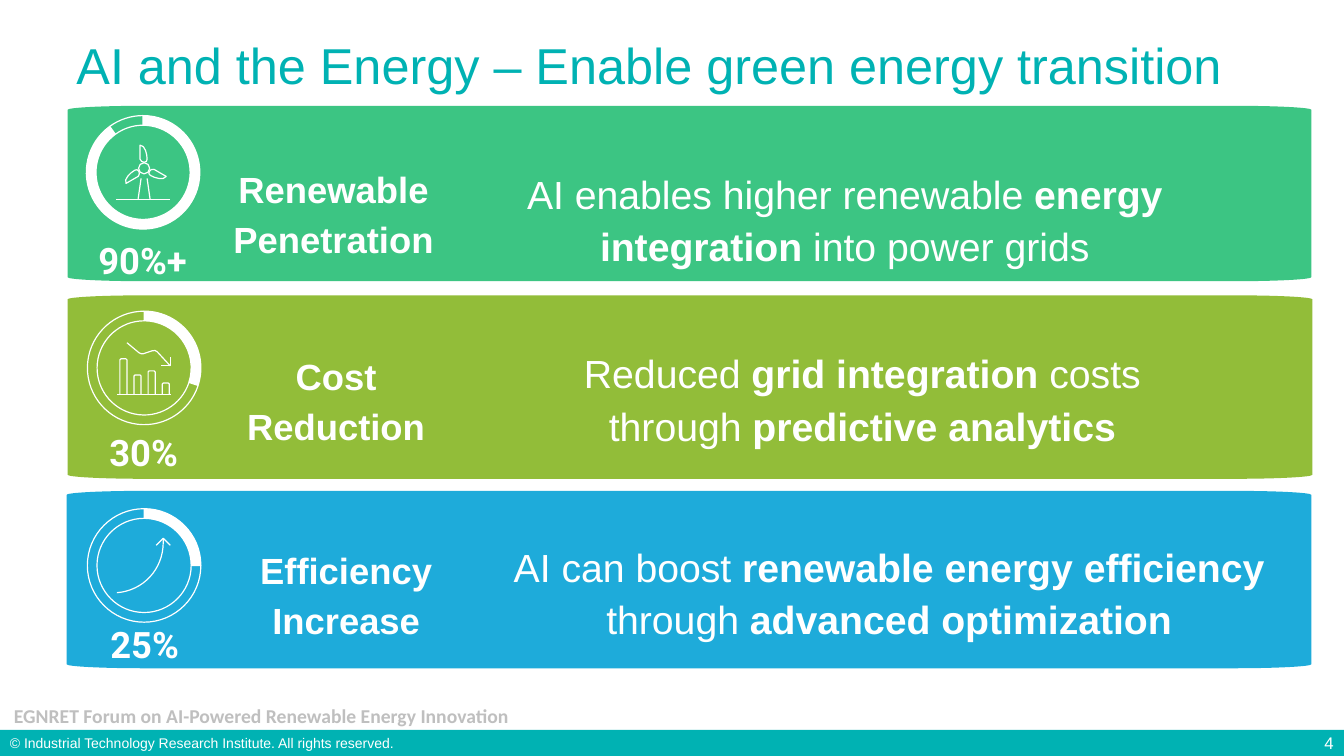
from math import cos, sin, tan, ceil, radians
from pptx import Presentation
from pptx.dml.color import RGBColor as Rgb
from pptx.enum.shapes import MSO_SHAPE as Shape
from pptx.enum.text import MSO_ANCHOR as Anchor, PP_ALIGN as Align
from pptx.oxml.ns import qn
from pptx.util import Inches, Pt

COLORS = {
    "teal": "00B2B3",
    "green": "3CC583",
    "olive": "92BD39",
    "blue": "1EABDA",
    "white": "FFFFFF",
    "grey": "BFBFBF",
}
ROWS = 75
COLS = 133.33


def line(*points):
    return [(p,) for p in points]


def arc(x, y, wide, high, start, end):
    count = ceil(abs(end - start) / 90)
    step = radians((end - start) / count)
    pull = 4 / 3 * tan(step / 4)

    def spot(t, k):
        return (x + wide * (sin(t) + k * cos(t)), y - high * (cos(t) - k * sin(t)))

    first = radians(start)
    turns = [first + step * i for i in range(count)]
    return line(spot(first, 0)) + [
        (spot(t, pull), spot(t + step, -pull), spot(t + step, 0)) for t in turns]


def turn(steps, x, y, angle):
    c, s = cos(radians(angle)), sin(radians(angle))
    return [tuple((x + a * c - b * s, y + a * s + b * c) for a, b in step)
            for step in steps]


class Deck:
    def __init__(self):
        self.show = Presentation()
        self.show.slide_width = Inches(13.333)
        self.show.slide_height = Inches(7.5)
        self.cell = self.show.slide_height / ROWS
        self.slide = self.show.slides.add_slide(self.show.slide_layouts[6])
        self.shapes = self.slide.shapes

    def size(self, *cells):
        return [round(c * self.cell) for c in cells]

    def paint(self, shape, fill, edge):
        shape.shadow.inherit = False
        if fill:
            shape.fill.solid()
            shape.fill.fore_color.rgb = Rgb.from_string(COLORS[fill])
        else:
            shape.fill.background()
        if edge:
            shape.line.color.rgb = Rgb.from_string(COLORS[edge])
            shape.line.width = Pt(0.84)
        else:
            shape.line.fill.background()

    def rect(self, x, y, w, h, fill):
        shape = self.shapes.add_shape(Shape.RECTANGLE, *self.size(x, y, w, h))
        self.paint(shape, fill, None)

    def draw(self, tracks, fill=None, edge=None):
        form = self.shapes.build_freeform(*self.size(*tracks[0][0][0]), scale=1.0)
        for i, track in enumerate(tracks):
            if i:
                form.move_to(*self.size(*track[0][0]))
            points = [self.size(*p) for step in track[1:] for p in step]
            form.add_line_segments(points, close=bool(fill))
        shape = form.convert_to_shape()
        self.bend(shape, [step for track in tracks for step in track])
        self.paint(shape, fill, edge)

    def bend(self, shape, steps):
        outline = shape._element.find(".//" + qn("a:path"))
        nodes = iter([n for n in outline if n.tag != qn("a:close")])
        for step in steps:
            group = [next(nodes) for _ in step]
            if len(group) == 3:
                bow = outline.makeelement(qn("a:cubicBezTo"))
                group[0].addprevious(bow)
                for node in group:
                    bow.append(node[0])
                    outline.remove(node)

    def band(self, x, y, w, h, fill):
        wide, high = 7.7, 0.4
        left, right = x + wide, x + w - wide
        top, low = y + high, y + h - high
        self.draw([
            arc(right, top, wide, high, 0, 90)
            + arc(right, low, wide, high, 90, 180)
            + arc(left, low, wide, high, 180, 270)
            + arc(left, top, wide, high, 270, 360)
        ], fill)

    def ring(self, x, y, share):
        big, small = 5.63, 4.67
        end = 360 * share
        self.draw([arc(x, y, r, r, end, 360) for r in (big, small)], edge="white")
        self.draw([arc(x, y, big, big, 0, end) + arc(x, y, small, small, end, 0)],
                  "white", "white")

    def text(self, x, y, w, h, lines, size, color="white", font="Arial",
             bold=False, align=Align.CENTER, gap=None, pad=False, anchor=Anchor.TOP):
        frame = self.shapes.add_textbox(*self.size(x, y, w, h)).text_frame
        frame.word_wrap = True
        frame.vertical_anchor = anchor
        frame.margin_left = frame.margin_right = Inches(0.1 if pad else 0)
        frame.margin_top = frame.margin_bottom = Inches(0.05 if pad else 0)
        for i, parts in enumerate(lines):
            para = frame.add_paragraph() if i else frame.paragraphs[0]
            para.alignment = align
            if gap:
                para.line_spacing = gap
            para.font.size = Pt(size)
            para.font.name = font
            para.font.color.rgb = Rgb.from_string(COLORS[color])
            if isinstance(parts, str):
                para.font.bold = bold
                para.add_run().text = parts
            else:
                for k, part in enumerate(parts):
                    run = para.add_run()
                    run.text = part
                    run.font.bold = k % 2 == 1


def wind():
    x, y = 14.3, 16.7
    blade = line((-0.4, -2.3), (-0.4, -0.9)) + [
        ((-0.3, -0.7), (-0.2, -0.6), (0, -0.6)),
        ((0.2, -0.6), (0.3, -0.7), (0.3, -0.9)),
        ((0.3, -1.4), (0.1, -2.3), (-0.4, -2.3)),
    ]
    return [
        line((11.5, 19.8), (16.9, 19.8)),
        arc(x, y, 0.55, 0.55, 0, 360),
        *[turn(blade, x, y, angle) for angle in (0, 120, 240)],
        line((14, 17.7), (13.7, 19.8)),
        line((14.6, 17.7), (14.9, 19.8)),
    ]


def chart():
    base, wide, r = 39.1, 0.7, 0.1
    bars = []
    for i, top in enumerate((35.6, 37.2, 36.8, 38)):
        x = 11.9 + 1.4 * i
        bars.append(
            line((x, base))
            + arc(x + r, top + r, r, r, 270, 360)
            + arc(x + wide - r, top + r, r, r, 0, 90)
            + line((x + wide, base))
        )
    trend = (
        line((12.6, 34), (13.8, 35))
        + [((13.9, 35.1), (14.1, 35.1), (14.2, 35.1))]
        + line((15.1, 34.8))
        + [((15.3, 34.7), (15.5, 34.8), (15.6, 34.9))]
        + line((16.9, 36.3))
    )
    head = line((16, 36.3), (16.9, 36.3), (16.9, 35.4))
    return [line((11.6, base), (17, base)), *bars, trend, head]


def growth():
    tip = (16.2, 53.4)
    return [
        line((15.5, 54.1), tip, (16.9, 54.1)),
        line(tip, (16.2, 53.8)) + [((16.2, 56.5), (14.2, 58.6), (11.6, 58.8))],
    ]


def main():
    deck = Deck()
    deck.rect(0, 72.4, COLS, 2.6, "teal")
    deck.text(0, 72.4, 44.7, 2.7,
              ["© Industrial Technology Research Institute. All rights reserved."],
              10, align=Align.LEFT, pad=True)
    deck.text(6.6, 2.9, 120.8, 10.3,
              ["AI and the Energy – Enable green energy transition"],
              36, "teal", align=Align.LEFT, pad=True)

    bands = [
        ((6.7, 10.5, 123.4, 17.4), "green", (14.2, 17.1, 0.9), wind(),
         "90%+", (9.7, 23.6, 8.9, 4.4),
         ["Renewable Penetration"], (14, 15.9, 38.2, 8.5),
         ["AI enables higher renewable ", "energy integration", " into power grids"],
         (45.7, 16.3, 76.2, 8.7)),
        ((6.7, 29.3, 123.5, 18.2), "olive", (14.3, 36.5, 0.3), chart(),
         "30%", (10.4, 42.7, 7.7, 4.4),
         ["Cost", "Reduction"], (18.9, 34.5, 28.9, 8.4),
         ["Reduced ", "grid integration", " costs through ", "predictive analytics"],
         (55.7, 34.1, 59.7, 8.7)),
        ((6.6, 48.7, 123.5, 17.6), "blue", (14.3, 56.1, 0.25), growth(),
         "25%", (10.9, 61.7, 6.9, 4.4),
         ["Efficiency", "Increase"], (17.4, 53.7, 33.9, 8.4),
         ["AI can boost ", "renewable energy efficiency", " through ",
          "advanced optimization"], (49.2, 53.3, 78, 8.7)),
    ]
    for box, fill, ring, icon, rate, spot, name, side, note, body in bands:
        deck.band(*box, fill)
        deck.ring(*ring)
        deck.draw(icon, edge="white")
        deck.text(*spot, [rate], 26, font="Roboto", bold=True)
        deck.text(*side, name, 26, bold=True, gap=1.15)
        deck.text(*body, [note], 28, gap=1.12)

    deck.text(125, 72.4, 8.3, 2.6, ["4"], 12, align=Align.RIGHT, pad=True,
              anchor=Anchor.MIDDLE)
    deck.text(0.4, 69.3, 54, 3.4,
              ["EGNRET Forum on AI-Powered Renewable Energy Innovation"],
              14, "grey", "Calibri", True, Align.LEFT, pad=True)
    deck.show.save("out.pptx")


if __name__ == "__main__":
    main()
